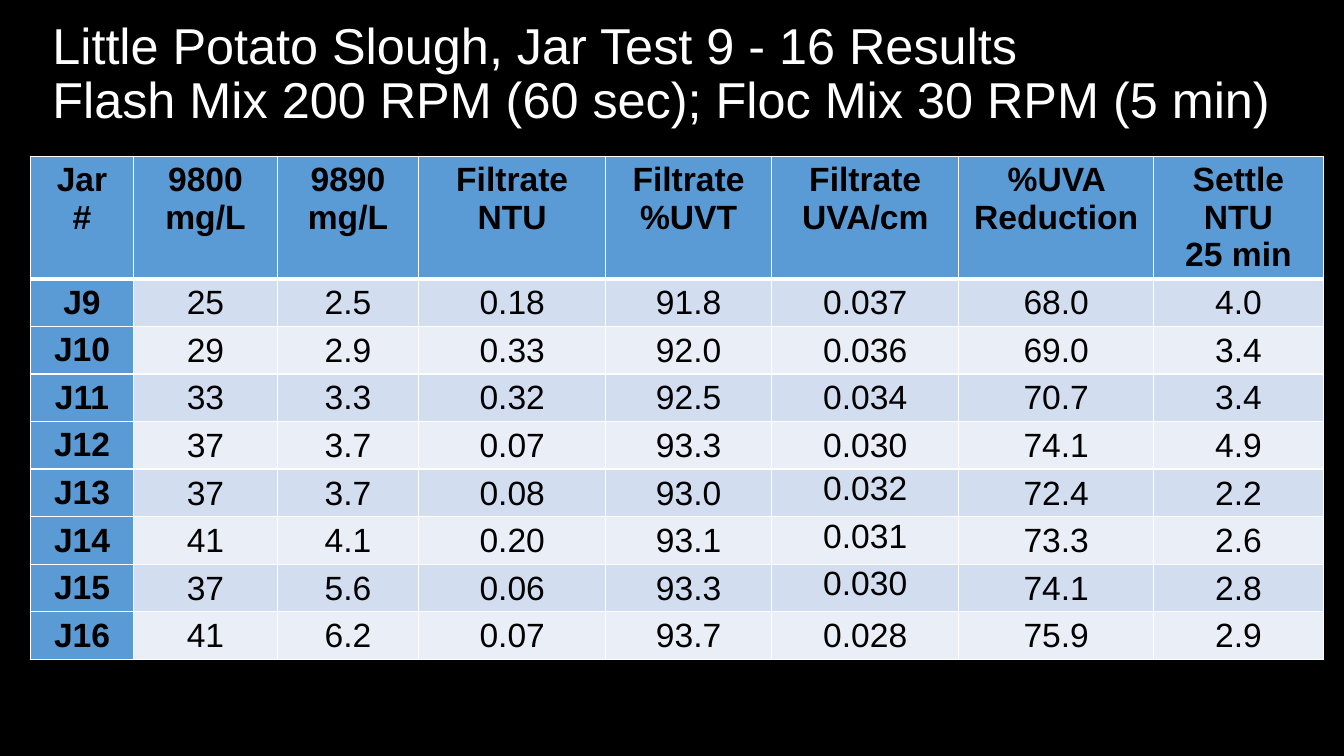
from dataclasses import dataclass

from lxml import etree
from pptx import Presentation
from pptx.dml.color import RGBColor
from pptx.enum.text import MSO_ANCHOR, MSO_AUTO_SIZE, PP_ALIGN
from pptx.oxml.ns import qn
from pptx.util import Pt

TOP, MIDDLE = MSO_ANCHOR.TOP, MSO_ANCHOR.MIDDLE
LEFT, CENTER = PP_ALIGN.LEFT, PP_ALIGN.CENTER
NO_FIT = MSO_AUTO_SIZE.NONE
TITLE_ONLY = 5


@dataclass(frozen=True)
class Theme:
    font: str = "Arial"
    back: str = "000000"
    light: str = "FFFFFF"
    dark: str = "000000"
    head: str = "5B9BD5"
    bands: tuple = ("D2DEEF", "EAEFF7")
    title: int = 36
    body: int = 24
    thin: int = 1
    thick: int = 3


THEME = Theme()
TITLE = (
    "Little Potato Slough, Jar Test 9 - 16 Results\v"
    "Flash Mix 200 RPM (60 sec); Floc Mix 30 RPM (5 min)"
)
HEADS = [
    "Jar\v#", "9800\nmg/L", "9890\nmg/L", "Filtrate\nNTU", "Filtrate\n%UVT",
    "Filtrate\nUVA/cm", "%UVA Reduction", "Settle\nNTU\n25 min",
]
JARS = [
    ["J9", "25", "2.5", "0.18", "91.8", "0.037", "68.0", "4.0"],
    ["J10", "29", "2.9", "0.33", "92.0", "0.036", "69.0", "3.4"],
    ["J11", "33", "3.3", "0.32", "92.5", "0.034", "70.7", "3.4"],
    ["J12", "37", "3.7", "0.07", "93.3", "0.030", "74.1", "4.9"],
    ["J13", "37", "3.7", "0.08", "93.0", "0.032", "72.4", "2.2"],
    ["J14", "41", "4.1", "0.20", "93.1", "0.031", "73.3", "2.6"],
    ["J15", "37", "5.6", "0.06", "93.3", "0.030", "74.1", "2.8"],
    ["J16", "41", "6.2", "0.07", "93.7", "0.028", "75.9", "2.9"],
]
WIDTHS = [74, 102.4, 101.2, 133.4, 118.6, 133.8, 139, 121.4]
ROW_HEIGHT = 29.5
UVA_COL = 5
HIGH_JARS = ("J13", "J14", "J15")
INSETS = {
    "margin_left": Pt(0.7), "margin_right": Pt(0.7),
    "margin_top": Pt(0.7), "margin_bottom": Pt(0),
}


def apply(item, values):
    for name, value in values.items():
        setattr(item, name, value)


def style(frame, size, color, align, bold=False):
    for para in frame.paragraphs:
        para.alignment = align
        apply(para.font, {"name": THEME.font, "size": Pt(size), "bold": bold})
        para.font.color.rgb = RGBColor.from_string(color)
        for run in para.runs:
            apply(run.font, {"name": THEME.font, "size": Pt(size), "bold": bold})
            run.font.color.rgb = RGBColor.from_string(color)


def add_title(slide):
    title = slide.shapes.title
    apply(title, {
        "left": Pt(30.2), "top": Pt(7.9), "width": Pt(929.5), "height": Pt(91.4),
    })
    frame = title.text_frame
    frame.text = TITLE
    apply(frame, {
        "word_wrap": True, "auto_size": NO_FIT, "vertical_anchor": MIDDLE,
    })
    frame.paragraphs[0].line_spacing = 0.9
    style(frame, THEME.title, THEME.light, LEFT)


def add_edges(cell, widths):
    props = cell._tc.get_or_add_tcPr()
    for side, width in widths.items():
        line = etree.SubElement(props, qn(f"a:ln{side}"), w=str(Pt(width)))
        fill = etree.SubElement(line, qn("a:solidFill"))
        etree.SubElement(fill, qn("a:srgbClr"), val=THEME.light)


def fill_cell(cell, text, row, col):
    head = row == 0 or col == 0
    cell.text = text
    style(cell.text_frame, THEME.body, THEME.dark, CENTER, head)
    add_edges(cell, {
        "L": THEME.thin,
        "R": THEME.thin,
        "T": THEME.thick if row == 1 else THEME.thin,
        "B": THEME.thick if row == 0 else THEME.thin,
    })
    color = THEME.head if head else THEME.bands[(row - 1) % 2]
    cell.fill.solid()
    cell.fill.fore_color.rgb = RGBColor.from_string(color)
    if not head:
        high = col == UVA_COL and JARS[row - 1][0] in HIGH_JARS
        apply(cell, {**INSETS, "vertical_anchor": TOP if high else MIDDLE})


def add_grid(slide):
    rows = [HEADS, *JARS]
    shape = slide.shapes.add_table(
        len(rows), len(HEADS), Pt(21.6), Pt(111.6), Pt(sum(WIDTHS)), Pt(381.6)
    )
    table = shape.table
    table.first_col = True
    for col, width in zip(table.columns, WIDTHS):
        col.width = Pt(width)
    for r, texts in enumerate(rows):
        table.rows[r].height = Pt(ROW_HEIGHT)
        for c, text in enumerate(texts):
            fill_cell(table.cell(r, c), text, r, c)
    shape.height = Pt(381.6)


def main():
    deck = Presentation()
    apply(deck, {"slide_width": Pt(960), "slide_height": Pt(540)})
    slide = deck.slides.add_slide(deck.slide_layouts[TITLE_ONLY])
    slide.background.fill.solid()
    slide.background.fill.fore_color.rgb = RGBColor.from_string(THEME.back)
    add_title(slide)
    add_grid(slide)
    deck.save("out.pptx")


if __name__ == "__main__":
    main()
